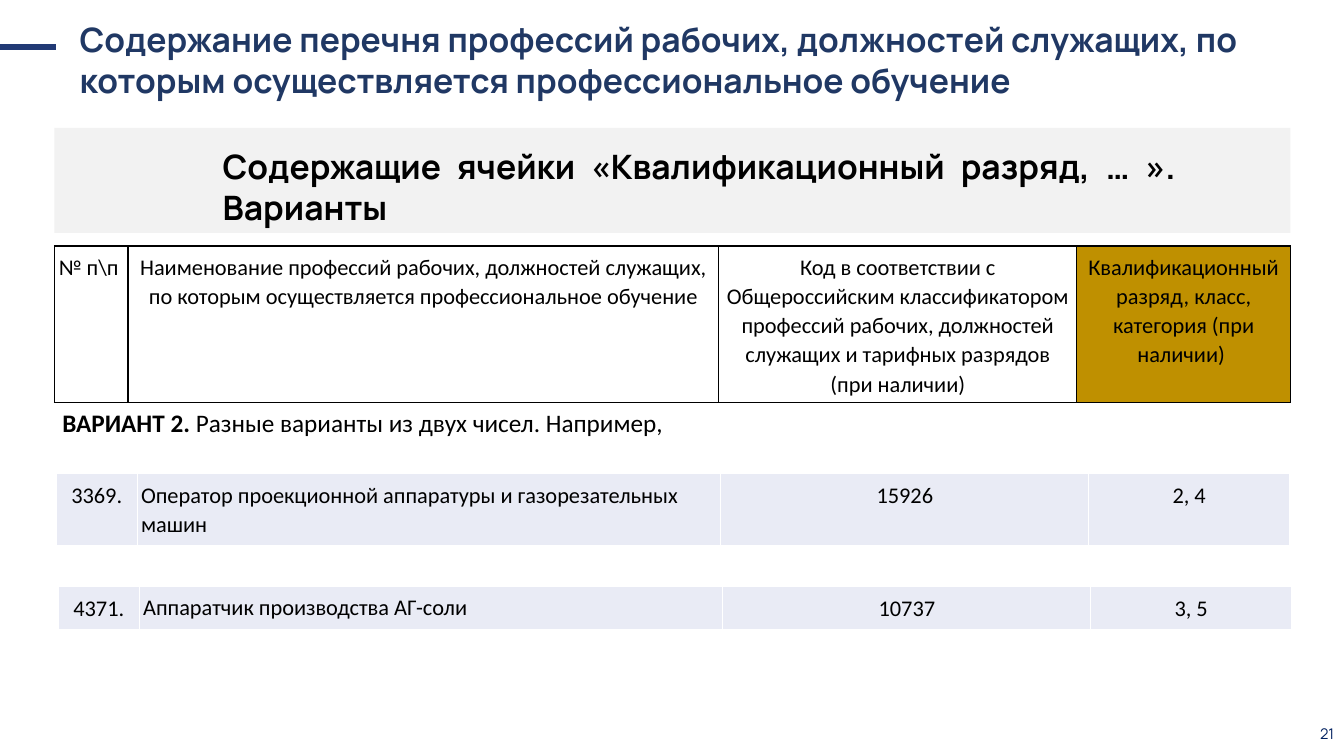
from dataclasses import dataclass
from lxml.etree import SubElement as Sub
from pptx import Presentation
from pptx.dml.color import RGBColor as Rgb
from pptx.enum.shapes import MSO_CONNECTOR as Link, MSO_SHAPE as Shape
from pptx.enum.text import MSO_ANCHOR as Anchor, PP_ALIGN as Align
from pptx.oxml import parse_xml
from pptx.oxml.ns import nsdecls, qn
from pptx.util import Inches, Pt


@dataclass(frozen=True)
class Theme:
    head: str = "Manrope"
    body: str = "Calibri"
    navy: str = "203864"
    rule: str = "213A75"
    page: str = "002060"
    black: str = "000000"
    white: str = "FFFFFF"
    band: str = "F2F2F2"
    gold: str = "BF9000"
    pale: str = "E9EBF5"
    big: float = 24
    mid: float = 18
    cell: float = 16
    small: float = 10.5


theme = Theme()


def style(run, face, size, color, bold=False):
    font = run.font
    font.name, font.size, font.bold = face, Pt(size), bold
    font.color.rgb = Rgb.from_string(color)


def add_text(slide, box, text, size, color, bold=False, align=Align.LEFT):
    frame = slide.shapes.add_textbox(*map(Inches, box)).text_frame
    frame.word_wrap = True
    frame.text = text
    para = frame.paragraphs[0]
    para.alignment = align
    style(para.runs[0], theme.head, size, color, bold)
    return frame


def add_title(slide, box):
    left, top, width, height = box
    mid = Inches(top + 0.33)
    line = slide.shapes.add_connector(Link.STRAIGHT, 0, mid, Inches(left - 0.13), mid)
    line.line.color.rgb = Rgb.from_string(theme.rule)
    line.line.width = Pt(4.5)
    Sub(line._element.spPr, qn("a:effectLst"))
    add_text(slide, box, "Содержание перечня профессий рабочих, должностей служащих, "
             "по которым осуществляется профессиональное обучение",
             theme.big, theme.navy, True)


def add_band(slide, box):
    left, top, width, height = box
    band = slide.shapes.add_shape(Shape.RECTANGLE, *map(Inches, box))
    band.shadow.inherit = False
    band.fill.solid()
    band.fill.fore_color.rgb = Rgb.from_string(theme.band)
    band.line.fill.background()
    inner = left + 1.57, top + 0.13, width - 2.61, height - 0.13
    add_text(slide, inner, "Содержащие ячейки «Квалификационный разряд, … ». Варианты",
             theme.big, theme.black, True, Align.JUSTIFY)


def add_edges(cell, color):
    props = cell._tc.get_or_add_tcPr()
    for spot, side in enumerate("LRTB"):
        props.insert(spot, parse_xml(
            f'<a:ln{side} {nsdecls("a")} w="12700"><a:solidFill>'
            f'<a:srgbClr val="{color}"/></a:solidFill></a:ln{side}>'))


def add_row(slide, box, cols, texts, fills, edge, aligns, loose=None):
    table = slide.shapes.add_table(1, len(cols), *map(Inches, box)).table
    table.first_row = table.horz_banding = False
    for i, (width, text, fill, align) in enumerate(zip(cols, texts, fills, aligns)):
        table.columns[i].width = Inches(width)
        cell = table.cell(0, i)
        cell.margin_left = cell.margin_right = Inches(0.04)
        cell.margin_top = cell.margin_bottom = Inches(0.07)
        if fill:
            cell.fill.solid()
            cell.fill.fore_color.rgb = Rgb.from_string(fill)
        else:
            cell.fill.background()
        add_edges(cell, edge)
        para = cell.text_frame.paragraphs[0]
        para.text = text
        para.alignment = align
        if i != loose:
            para.line_spacing, para.space_after = 1.06, Pt(8)
        style(para.runs[0], theme.body, theme.cell, theme.black)


def add_header(slide, box):
    texts = ["№ п\\п ",
             "Наименование профессий рабочих, должностей служащих, "
             "по которым осуществляется профессиональное обучение",
             "Код в соответствии с Общероссийским классификатором профессий рабочих, "
             "должностей служащих и тарифных разрядов (при наличии)",
             "Квалификационный разряд, класс, категория (при наличии) "]
    add_row(slide, box, (0.73, 5.86, 3.55, 2.12), texts,
            (None, None, None, theme.gold), theme.black, [Align.CENTER] * 4)


def add_sample(slide, box, texts, loose=None):
    aligns = Align.CENTER, Align.LEFT, Align.CENTER, Align.CENTER
    add_row(slide, box, (0.8, 5.79, 3.65, 1.99), texts,
            [theme.pale] * 4, theme.white, aligns, loose)


def add_note(slide, box):
    frame = add_text(slide, box, "ВАРИАНТ 2.", theme.mid, theme.black, True, Align.JUSTIFY)
    para = frame.paragraphs[0]
    para.line_spacing, para.space_after = 1.5, Pt(8)
    para.add_run().text = " Разные варианты из двух чисел. Например,"
    for run, bold in zip(para.runs, (True, False)):
        style(run, theme.body, theme.mid, theme.black, bold)


def add_page(slide, box):
    frame = add_text(slide, box, "21", theme.small, theme.page, align=Align.RIGHT)
    frame.vertical_anchor = Anchor.MIDDLE


def main():
    deck = Presentation()
    deck.slide_width, deck.slide_height = Inches(13.33), Inches(7.5)
    slide = deck.slides.add_slide(deck.slide_layouts[6])
    add_band(slide, (0.54, 1.27, 12.26, 1.04))
    add_title(slide, (0.69, 0.14, 12.11, 0.91))
    add_page(slide, (12.81, 7.08, 0.52, 0.4))
    add_header(slide, (0.54, 2.44, 12.26, 1.54))
    add_sample(slide, (0.56, 4.7, 12.23, 0.71),
               ("3369.", "Оператор проекционной аппаратуры и газорезательных машин",
                "15926", "2, 4"))
    add_note(slide, (0.52, 3.84, 12.25, 1.03))
    add_sample(slide, (0.58, 5.82, 12.23, 0.41),
               ("4371.", "Аппаратчик производства АГ-соли", "10737", "3, 5"), loose=1)
    deck.save("out.pptx")


if __name__ == "__main__":
    main()
